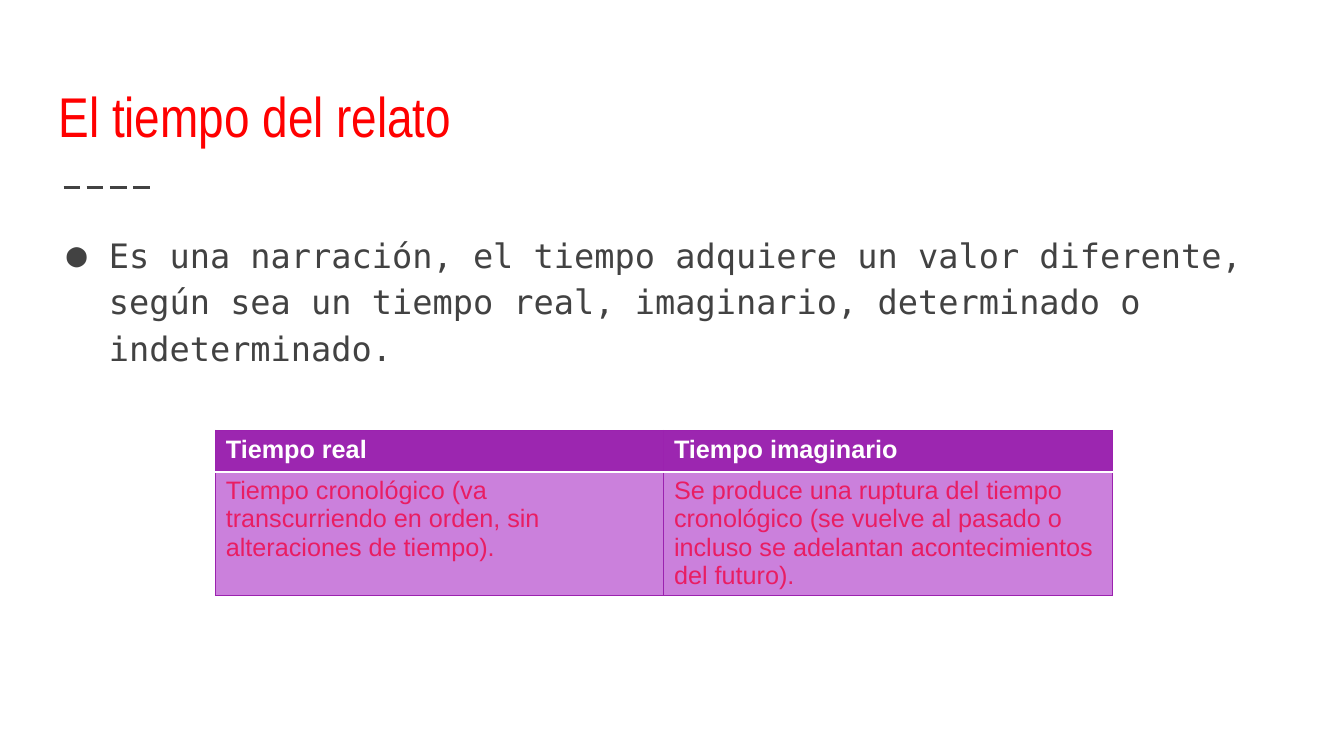
from lxml.etree import SubElement
from pptx import Presentation
from pptx.dml.color import RGBColor
from pptx.enum.dml import MSO_LINE
from pptx.enum.shapes import MSO_CONNECTOR
from pptx.enum.text import MSO_ANCHOR, MSO_AUTO_SIZE, PP_ALIGN
from pptx.oxml import parse_xml
from pptx.oxml.ns import nsdecls, qn
from pptx.util import Inches, Pt

TITLE = "El tiempo del relato"
BODY = ("Es una narración, el tiempo adquiere un valor diferente, según sea "
        "un tiempo real, imaginario, determinado o indeterminado.")
ROWS = [
    ("Tiempo real", "Tiempo imaginario"),
    ("Tiempo cronológico (va transcurriendo en orden, sin alteraciones de tiempo).",
     "Se produce una ruptura del tiempo cronológico (se vuelve al pasado o "
     "incluso se adelantan acontecimientos del futuro)."),
]
ROW_HEIGHTS = (0.41, 1.23)
COLUMN_WIDTH = 4.445

RED = RGBColor(0xFF, 0x00, 0x00)
GRAY = RGBColor(0x42, 0x42, 0x42)
WHITE = RGBColor(0xFF, 0xFF, 0xFF)
PINK = RGBColor(0xE9, 0x1D, 0x63)
PURPLE = RGBColor(0x9C, 0x26, 0xB0)
LILAC = RGBColor(0xCB, 0x80, 0xDC)
BORDER = RGBColor(0x9B, 0x22, 0xAF)


def add_span(para, text, size, font, color, bold=False):
    span = para.add_run()
    span.text = text
    span.font.size = Pt(size)
    span.font.name = font
    span.font.bold = bold
    span.font.color.rgb = color


def place_text(box, left, top, width, height, anchor):
    box.left, box.top = Inches(left), Inches(top)
    box.width, box.height = Inches(width), Inches(height)
    frame = box.text_frame
    frame.word_wrap = True
    frame.auto_size = MSO_AUTO_SIZE.NONE
    frame.vertical_anchor = anchor
    frame.margin_left = frame.margin_right = Inches(0.13)
    frame.margin_top = frame.margin_bottom = Inches(0.13)
    para = frame.paragraphs[0]
    para.alignment = PP_ALIGN.LEFT
    para.space_before = Pt(0)
    return para


def add_bullet(para, char, font, color):
    props = para._p.get_or_add_pPr()
    props.set("marL", str(Inches(0.5)))
    props.set("indent", str(Inches(-0.42)))
    tint = SubElement(props, qn("a:buClr"))
    SubElement(tint, qn("a:srgbClr"), val=str(color))
    SubElement(props, qn("a:buFont"), typeface=font)
    SubElement(props, qn("a:buChar"), char=char)


def set_borders(cell, sides):
    props = cell._tc.get_or_add_tcPr()
    for index, (side, color, width) in enumerate(sides):
        props.insert(index, parse_xml(
            f'<a:ln{side} {nsdecls("a")} w="{Pt(width)}"><a:solidFill>'
            f'<a:srgbClr val="{color}"/></a:solidFill></a:ln{side}>'))


def add_times_table(page):
    frame = page.shapes.add_table(
        len(ROWS), len(ROWS[0]), Inches(2.14), Inches(4.27),
        Inches(COLUMN_WIDTH * len(ROWS[0])), Inches(sum(ROW_HEIGHTS)))
    table = frame.table
    table.horz_banding = False
    for column in table.columns:
        column.width = Inches(COLUMN_WIDTH)
    edge, divider = (BORDER, 0.75), (WHITE, 2)
    for r, texts in enumerate(ROWS):
        header = r == 0
        table.rows[r].height = Inches(ROW_HEIGHTS[r])
        top, bottom = (edge, divider) if header else (divider, edge)
        for c, text in enumerate(texts):
            cell = table.cell(r, c)
            cell.fill.solid()
            cell.fill.fore_color.rgb = PURPLE if header else LILAC
            add_span(cell.text_frame.paragraphs[0], text, 18, "Arial",
                     WHITE if header else PINK, header)
            set_borders(cell, [("L", *edge), ("R", *edge),
                               ("T", *top), ("B", *bottom)])


def main():
    deck = Presentation()
    deck.slide_width, deck.slide_height = Inches(13.33), Inches(7.5)
    page = deck.slides.add_slide(deck.slide_layouts[1])
    page.background.fill.solid()
    page.background.fill.fore_color.rgb = WHITE

    rule = page.shapes.add_connector(
        MSO_CONNECTOR.STRAIGHT, Inches(0.63), Inches(1.86), Inches(1.52), Inches(1.86))
    rule.line.color.rgb = GRAY
    rule.line.width = Pt(1.5)
    rule.line.dash_style = MSO_LINE.LONG_DASH
    SubElement(rule._element.spPr, qn("a:effectLst"))

    title, body = page.placeholders
    para = place_text(title, 0.45, 0.54, 12.42, 1.07, MSO_ANCHOR.BOTTOM)
    add_span(para, TITLE, 40, "Arial Narrow", RED)

    para = place_text(body, 0.45, 2.14, 12.42, 4.52, MSO_ANCHOR.TOP)
    para.line_spacing = 1.15
    add_bullet(para, "●", "DejaVu Sans Mono", GRAY)
    add_span(para, BODY, 24, "DejaVu Sans Mono", GRAY)

    add_times_table(page)
    deck.save("out.pptx")


if __name__ == "__main__":
    main()
